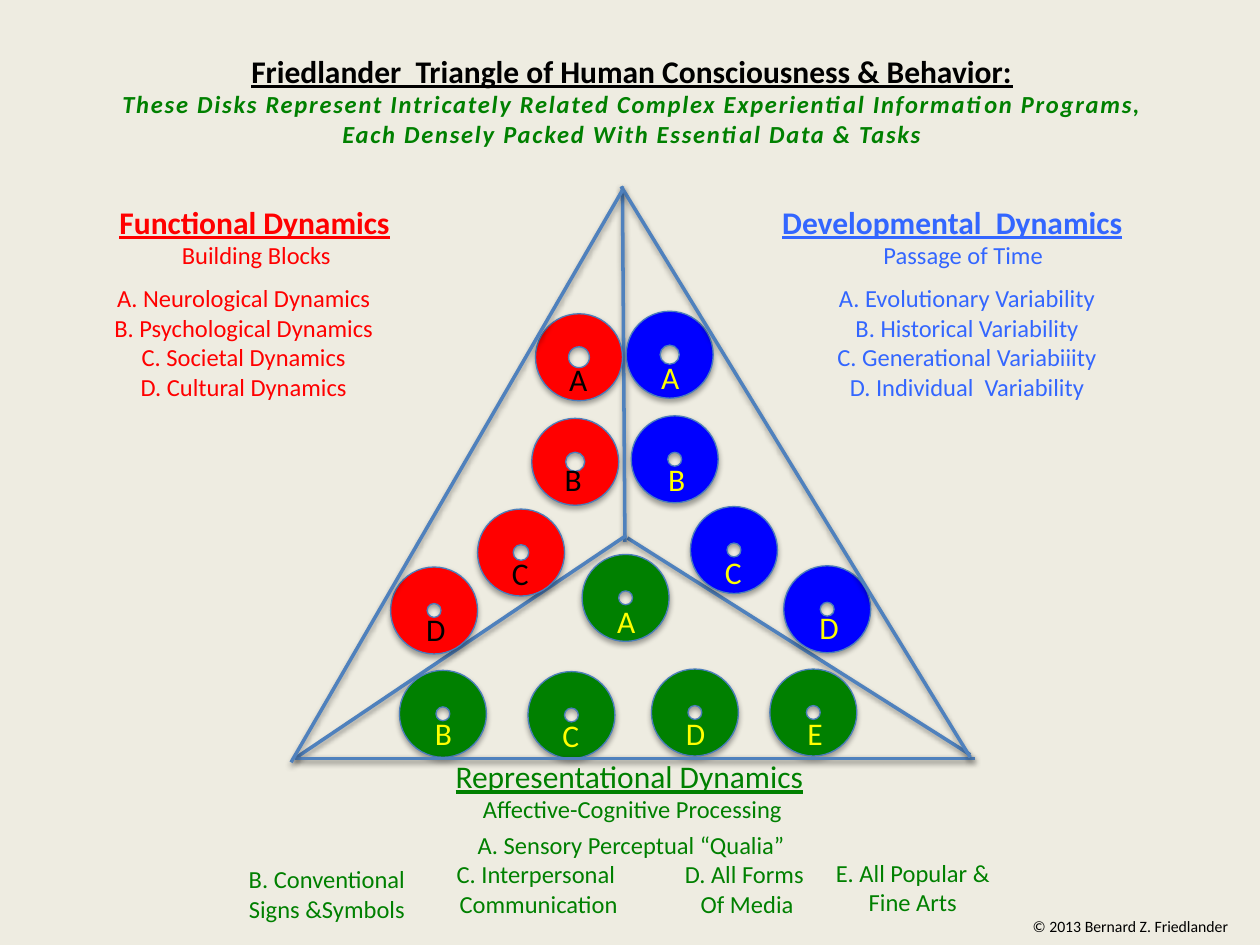
from lxml import etree
from pptx import Presentation
from pptx.dml.color import RGBColor
from pptx.enum import shapes, text
from pptx.oxml.ns import qn
from pptx.util import Inches, Pt

CREAM = RGBColor(0xEE, 0xEC, 0xE1)
BLACK = RGBColor(0, 0, 0)
RED = RGBColor(0xFF, 0, 0)
BLUE = RGBColor(0, 0, 0xFF)
GREEN = RGBColor(0, 0x80, 0)
YELLOW = RGBColor(0xFF, 0xFF, 0)
SKY = RGBColor(0x33, 0x66, 0xFF)
EDGE = RGBColor(0x4F, 0x81, 0xBD)
RIM = RGBColor(0x4B, 0x7E, 0xBC)

LEFT, CENTER = text.PP_ALIGN.LEFT, text.PP_ALIGN.CENTER
HEADING = dict(size=18, bold=True, underline=True)
BODY = dict(size=14)
SUBTITLE = dict(size=14, bold=True, italic=True, spacing=100)


def add_text(box, color, lines, wrap=True):
    """Add a text box; each line is (words, alignment, style)."""
    shape = slide.shapes.add_textbox(*map(Inches, box))
    frame = shape.text_frame
    frame.word_wrap = wrap
    for index, (words, alignment, style) in enumerate(lines):
        paragraph = frame.paragraphs[0] if index == 0 else frame.add_paragraph()
        paragraph.alignment = alignment
        run = paragraph.add_run()
        run.text = words
        font = run.font
        font.name = "Calibri"
        font.size = Pt(style["size"])
        font.color.rgb = color
        font.bold = style.get("bold", False)
        font.italic = style.get("italic", False)
        font.underline = style.get("underline", False)
        if "spacing" in style:
            run._r.get_or_add_rPr().set("spc", str(style["spacing"]))


def add_shadow(shape, distance, opacity):
    """Add a soft black shadow falling straight down."""
    effects = etree.SubElement(shape._element.spPr, qn("a:effectLst"))
    outer = etree.SubElement(effects, qn("a:outerShdw"), blurRad="40000",
                             dist=str(distance), dir="5400000", rotWithShape="0")
    color = etree.SubElement(outer, qn("a:srgbClr"), val="000000")
    etree.SubElement(color, qn("a:alpha"), val=str(opacity * 1000))


presentation = Presentation()
presentation.slide_width = Inches(10)
presentation.slide_height = Inches(7.5)
slide = presentation.slides.add_slide(presentation.slide_layouts[6])
slide.background.fill.solid()
slide.background.fill.fore_color.rgb = CREAM

add_text((0.51, 0.36, 9.01, 0.88), BLACK, [
    ("Friedlander  Triangle of Human Consciousness & Behavior:", CENTER, HEADING)])
add_text((0.51, 0.66, 9.01, 0.58), GREEN, [
    ("These Disks Represent Intricately Related Complex Experiential Information Programs,",
     CENTER, SUBTITLE),
    ("Each Densely Packed With Essential Data & Tasks", CENTER, SUBTITLE)])

# Triangle: inner spokes lie behind the disks, outer sides in front
spokes = [(4.98, 4.27, 7.7, 5.99), (4.94, 1.48, 4.96, 4.3), (4.97, 4.25, 2.34, 6.02)]
sides = [(2.34, 6.02, 7.74, 6.02), (4.93, 1.48, 7.7, 6.01), (4.94, 1.51, 2.31, 6.05)]

# Disk: letter, left, top, hole adjustment, letter centre, letter top
disk_groups = [
    (GREEN, YELLOW, [("A", 4.62, 4.4, 0.42, 4.97, 4.73),
                     ("B", 3.17, 5.32, 0.42, 3.52, 5.62),
                     ("C", 4.19, 5.33, 0.42, 4.53, 5.63),
                     ("D", 5.17, 5.31, 0.42, 5.52, 5.62),
                     ("E", 6.11, 5.31, 0.42, 6.47, 5.62)]),
    (BLUE, YELLOW, [("A", 4.97, 2.47, 0.39, 5.32, 2.79),
                    ("B", 5.01, 3.3, 0.42, 5.37, 3.6),
                    ("C", 5.48, 4.02, 0.42, 5.82, 4.34),
                    ("D", 6.22, 4.49, 0.42, 6.58, 4.78)]),
    (RED, BLACK, [("A", 4.25, 2.49, 0.38, 4.59, 2.81),
                  ("B", 4.22, 3.32, 0.39, 4.55, 3.6),
                  ("C", 3.79, 4.04, 0.41, 4.13, 4.35),
                  ("D", 3.1, 4.5, 0.42, 3.46, 4.79)]),
]
DISK = 0.69

for layer in (spokes, sides):
    for ends in layer:
        line = slide.shapes.add_connector(shapes.MSO_CONNECTOR.STRAIGHT, *map(Inches, ends))
        line.line.color.rgb = EDGE
        line.line.width = Pt(2)
        add_shadow(line, 20000, 38)
    if layer is spokes:
        for fill, _, disks in disk_groups:
            for _, left, top, hole, _, _ in disks:
                disk = slide.shapes.add_shape(shapes.MSO_SHAPE.DONUT, Inches(left),
                                              Inches(top), Inches(DISK), Inches(DISK))
                disk.adjustments[0] = hole
                disk.fill.solid()
                disk.fill.fore_color.rgb = fill
                disk.line.color.rgb = RIM
                disk.line.width = Pt(0.75)
                add_shadow(disk, 23000, 35)

for _, letter_color, disks in disk_groups:
    for letter, _, _, _, middle, top in disks:
        add_text((middle - 0.18, top, 0.36, 0.4), letter_color,
                 [(letter, CENTER, dict(size=18))], wrap=False)

add_text((0.85, 1.56, 2.37, 0.64), RED, [
    ("Functional Dynamics", LEFT, HEADING), ("Building Blocks", CENTER, BODY)])
add_text((6.11, 1.56, 3.07, 0.64), SKY, [
    ("Developmental  Dynamics", LEFT, HEADING), ("Passage of Time", CENTER, BODY)])
add_text((3.5, 5.96, 2.99, 0.4), GREEN, [
    ("Representational Dynamics", CENTER, dict(size=18, underline=True))], wrap=False)

body_boxes = [
    ((0.8, 2.2, 2.27, 1.04), RED, ["A. Neurological Dynamics", "B. Psychological Dynamics",
                                   "C. Societal Dynamics", "D. Cultural Dynamics"]),
    ((6.49, 2.2, 2.37, 1.04), SKY, ["A. Evolutionary Variability", "B. Historical Variability",
                                    "C. Generational Variabiiity", "D. Individual  Variability"]),
    ((3.34, 6.25, 3.36, 0.34), GREEN, ["Affective-Cognitive Processing"]),
    ((3.59, 6.54, 2.84, 0.34), GREEN, ["A. Sensory Perceptual “Qualia”"]),
    ((1.73, 6.81, 1.73, 0.57), GREEN, ["B. Conventional", "Signs &Symbols"]),
    ((3.35, 6.77, 1.85, 0.57), GREEN, ["C. Interpersonal ", "Communication"]),
    ((5.23, 6.77, 1.4, 0.57), GREEN, ["D. All Forms ", "Of Media"]),
    ((6.33, 6.76, 1.83, 0.57), GREEN, ["E. All Popular &", "Fine Arts"]),
]
for box, color, lines in body_boxes:
    add_text(box, color, [(words, CENTER, BODY) for words in lines])

add_text((8.08, 7.23, 1.81, 0.25), BLACK, [
    ("© 2013 Bernard Z. Friedlander ", CENTER, dict(size=9))])

presentation.save("out.pptx")
